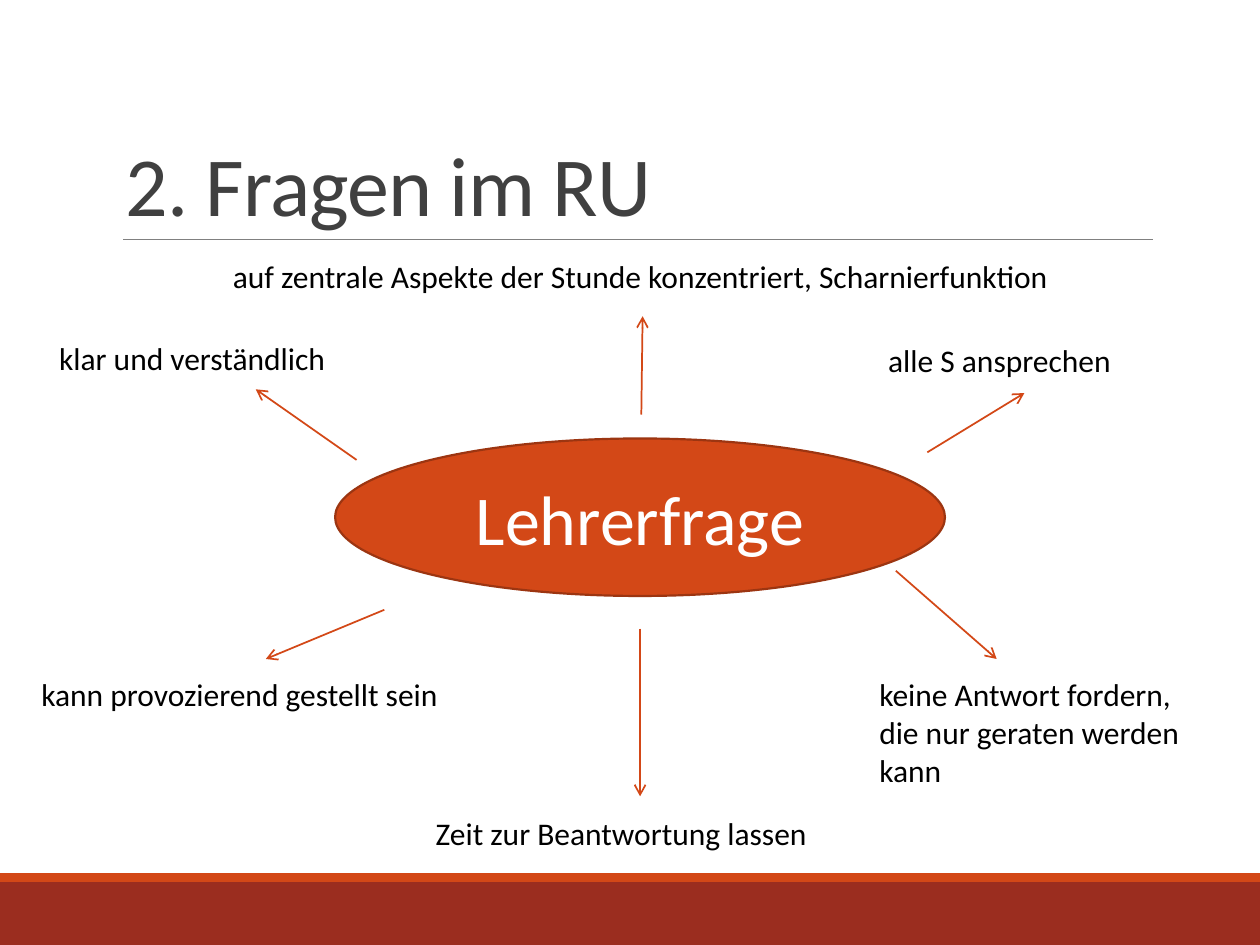
from typing import NamedTuple

from lxml import etree
from pptx import Presentation
from pptx.dml.color import RGBColor
from pptx.enum.shapes import MSO_CONNECTOR, MSO_SHAPE
from pptx.enum.text import MSO_ANCHOR, MSO_AUTO_SIZE, PP_ALIGN
from pptx.oxml.ns import qn
from pptx.util import Inches, Pt

STRAIGHT = MSO_CONNECTOR.STRAIGHT
RECTANGLE, OVAL = MSO_SHAPE.RECTANGLE, MSO_SHAPE.OVAL
BOTTOM, MIDDLE, TOP = MSO_ANCHOR.BOTTOM, MSO_ANCHOR.MIDDLE, MSO_ANCHOR.TOP
LEFT, CENTER = PP_ALIGN.LEFT, PP_ALIGN.CENTER
FIT_SHAPE = MSO_AUTO_SIZE.SHAPE_TO_FIT_TEXT

FONT = "Calibri"
ORANGE, DARK_ORANGE, RED = "D34817", "9C3511", "9B2D1F"
GRAY, DARK_GRAY, BLACK, WHITE = "808080", "404040", "000000", "FFFFFF"


class Box(NamedTuple):
    left: float
    top: float
    width: float
    height: float


class Line(NamedTuple):
    x1: float
    y1: float
    x2: float
    y2: float


class Aspect(NamedTuple):
    """One quality of a teacher's question and the arrow leading to it."""
    lines: tuple[str, ...]
    box: Box
    arrow: Line
    wrap: bool = False


ASPECTS = (
    Aspect(("klar und verständlich",),
           Box(0.37, 2.64, 2.52, 0.4), Line(2.83, 3.65, 2.03, 3.09)),
    Aspect(("auf zentrale Aspekte der Stunde konzentriert, Scharnierfunktion",),
           Box(1.75, 1.99, 6.69, 0.4), Line(5.09, 3.29, 5.1, 2.51)),
    Aspect(("alle S ansprechen",),
           Box(6.95, 2.66, 2.22, 0.4), Line(7.36, 3.59, 8.13, 3.12)),
    Aspect(("keine Antwort fordern,", "die nur geraten werden kann"),
           Box(6.88, 5.31, 2.81, 1.01), Line(7.11, 4.53, 7.91, 5.23), wrap=True),
    Aspect(("Zeit zur Beantwortung lassen",),
           Box(3.36, 6.41, 3.47, 0.4), Line(5.08, 4.99, 5.08, 6.32)),
    Aspect(("kann provozierend gestellt sein",),
           Box(0.23, 5.31, 3.68, 0.4), Line(3.05, 4.84, 2.11, 5.23)),
)


def color(value: str) -> RGBColor:
    return RGBColor.from_string(value)


def write(shape, lines: tuple[str, ...], size: float, text_color: str,
          align=LEFT, line_spacing: float = 1.0, **frame_format) -> None:
    """Fill a shape with one paragraph per line; extra values go to its frame."""
    frame = shape.text_frame
    for name, value in frame_format.items():
        setattr(frame, name, value)
    frame.text = "\n".join(lines)
    font_format = {"name": FONT, "size": Pt(size)}
    for paragraph in frame.paragraphs:
        paragraph.alignment = align
        paragraph.line_spacing = line_spacing
        font = paragraph.runs[0].font
        for name, value in font_format.items():
            setattr(font, name, value)
        font.color.rgb = color(text_color)


def add_text_box(slide, box: Box):
    return slide.shapes.add_textbox(*map(Inches, box))


def add_filled_shape(slide, kind, box: Box, fill: str, outline: str | None = None):
    shape = slide.shapes.add_shape(kind, *map(Inches, box))
    shape.shadow.inherit = False
    shape.fill.solid()
    shape.fill.fore_color.rgb = color(fill)
    if outline:
        shape.line.color.rgb = color(outline)
        shape.line.width = Pt(1.25)
    else:
        shape.line.fill.background()
    return shape


def add_line(slide, line: Line, line_color: str, width: float, arrow: bool = False) -> None:
    connector = slide.shapes.add_connector(STRAIGHT, *map(Inches, line))
    connector.line.color.rgb = color(line_color)
    connector.line.width = Pt(width)
    if arrow:
        outline = connector.line._get_or_add_ln()
        etree.SubElement(outline, qn("a:tailEnd"), type="arrow")
    etree.SubElement(connector._element.spPr, qn("a:effectLst"))


def add_frame(slide) -> None:
    """Draw the footer bands, the rule and the title."""
    add_filled_shape(slide, RECTANGLE, Box(0, 7, 10, 0.5), RED)
    add_filled_shape(slide, RECTANGLE, Box(0, 6.93, 10, 0.07), ORANGE)
    add_line(slide, Line(0.98, 1.9, 9.15, 1.9), GRAY, 0.5)
    title = add_text_box(slide, Box(0.9, 0.31, 8.25, 1.59))
    write(title, ("2. Fragen im RU",), 48, DARK_GRAY, line_spacing=0.85,
          vertical_anchor=BOTTOM, word_wrap=True)
    title_run = title.text_frame.paragraphs[0].runs[0]
    title_run.font._element.set("spc", "-50")


def add_aspect(slide, aspect: Aspect) -> None:
    add_line(slide, aspect.arrow, ORANGE, 1, arrow=True)
    write(add_text_box(slide, aspect.box), aspect.lines, 18, BLACK,
          vertical_anchor=TOP, word_wrap=aspect.wrap, auto_size=FIT_SHAPE)


def main() -> None:
    presentation = Presentation()
    presentation.slide_width, presentation.slide_height = Inches(10), Inches(7.5)
    slide = presentation.slides.add_slide(presentation.slide_layouts[6])
    add_frame(slide)
    topic = add_filled_shape(slide, OVAL, Box(2.66, 3.48, 4.84, 1.25), ORANGE, DARK_ORANGE)
    write(topic, ("Lehrerfrage",), 40, WHITE, CENTER, vertical_anchor=MIDDLE, word_wrap=True)
    for aspect in ASPECTS:
        add_aspect(slide, aspect)
    presentation.save("out.pptx")


if __name__ == "__main__":
    main()
